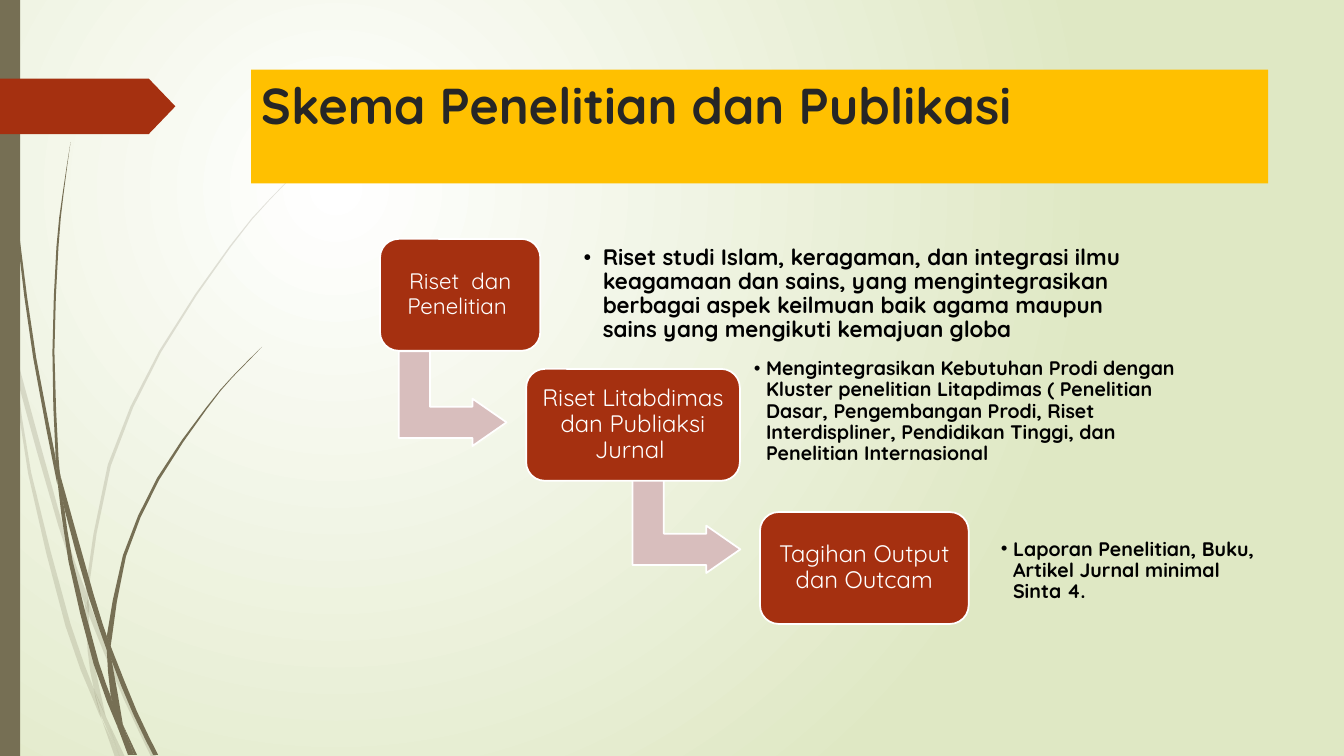
from dataclasses import dataclass
from typing import NamedTuple, Optional

from lxml.etree import SubElement
from pptx import Presentation
from pptx.dml.color import RGBColor
from pptx.enum.shapes import MSO_SHAPE
from pptx.enum.text import MSO_ANCHOR, PP_ALIGN
from pptx.oxml.ns import qn
from pptx.util import Emu, Pt

PX = 9144  # EMU per px, 100 px to the inch


def px(size: float) -> Emu:
    return Emu(round(size * PX))


@dataclass(frozen=True)
class Theme:
    font: str = "Quicksand"
    olive: str = "766F54"
    rust: str = "A53010"
    gold: str = "FFC000"
    rose: str = "D8BEBD"
    white: str = "FFFFFF"
    lime: str = "DFE8C4"
    dark: str = "262626"
    black: str = "000000"
    title: int = 36
    edge: float = 1.25


THEME = Theme()


class Box(NamedTuple):
    x: int
    y: int
    w: int
    h: int


class Note(NamedTuple):
    text: str
    box: Box
    size: int
    pad: int
    hang: int


class Step(NamedTuple):
    text: str
    box: Box
    size: int
    note: Note
    arrow: Optional[Box] = None


class Blade(NamedTuple):
    left: list
    right: list


FAINT = [
    Blade([(0, 282), (0, 299), (11, 350)], [(0, 282), (9, 322), (11, 350)]),
    Blade([(14, 345), (17, 376), (58, 522), (84, 599)], [(14, 345), (62, 520), (85, 586)]),
    Blade([(88, 596), (88, 610), (123, 694), (150, 751)],
          [(88, 596), (92, 607), (127, 692), (155, 751)]),
    Blade([(105, 711), (119, 751)], [(105, 711), (124, 751)]),
    Blade([(11, 350), (28, 470), (65, 621), (92, 693), (101, 714)],
          [(11, 350), (17, 376), (31, 469), (70, 619), (93, 683), (101, 714)]),
    Blade([(84, 599), (87, 646), (93, 683), (105, 711)],
          [(84, 599), (88, 610), (91, 646), (105, 711)]),
    Blade([(312, 153), (268, 197), (228, 244), (158, 348), (107, 461), (85, 584)],
          [(312, 153), (268, 198), (229, 245), (160, 349), (110, 462), (88, 584), (88, 596)]),
    Blade([(101, 714), (114, 751)], [(101, 714), (119, 751)]),
    Blade([(85, 586), (84, 599)], [(85, 586), (88, 596), (88, 610)]),
    Blade([(93, 683), (99, 707), (119, 751)], [(93, 683), (105, 711), (119, 751)]),
]
SOLID = [
    Blade([(3, 0), (4, 48), (7, 110), (17, 233), (33, 355), (57, 481)],
          [(4, 0), (5, 48), (8, 109), (19, 232), (36, 355), (55, 453), (57, 481)]),
    Blade([(60, 472), (64, 505), (88, 592), (106, 645)], [(60, 472), (93, 590), (106, 631)]),
    Blade([(110, 641), (111, 656), (132, 708), (152, 749)],
          [(110, 641), (113, 649), (136, 706), (157, 749)]),
    Blade([(57, 477), (68, 557), (93, 659), (117, 722)],
          [(57, 477), (64, 505), (72, 556), (98, 657), (110, 691), (117, 722)]),
    Blade([(70, 141), (62, 193), (56, 245), (52, 349), (55, 449), (60, 472)],
          [(70, 141), (63, 193), (58, 245), (54, 349), (58, 453), (60, 472)]),
    Blade([(122, 719), (133, 749)], [(122, 719), (136, 749)]),
    Blade([(55, 449), (57, 477), (64, 505)], [(55, 449), (60, 472), (64, 505)]),
    Blade([(260, 344), (231, 373), (204, 405), (156, 474), (122, 551), (106, 631)],
          [(261, 344), (231, 374), (205, 406), (158, 476), (125, 552), (111, 633), (110, 641)]),
    Blade([(117, 722), (127, 749)], [(117, 722), (131, 749)]),
    Blade([(106, 645), (110, 691), (122, 719)], [(106, 645), (111, 656), (122, 719)]),
    Blade([(106, 631), (106, 645)], [(106, 631), (110, 641), (111, 656)]),
    Blade([(110, 691), (117, 722), (130, 749)], [(110, 691), (122, 719), (133, 749)]),
]

STEPS = [
    Step("Riset  dan Penelitian ", Box(377, 237, 159, 111), 16,
         Note("Riset studi Islam, keragaman, dan integrasi ilmu keagamaan dan "
              "sains, yang mengintegrasikan berbagai aspek keilmuan baik agama "
              "maupun sains yang mengikuti kemajuan globa",
              Box(572, 234, 559, 116), 16, 7, 19),
         Box(402, 342, 94, 107)),
    Step("Riset Litabdimas dan Publiaksi Jurnal ", Box(522, 366, 212, 111), 17,
         Note("Mengintegrasikan Kebutuhan Prodi dengan Kluster penelitian "
              "Litapdimas ( Penelitian Dasar, Pengembangan Prodi, Riset "
              "Interdispliner, Pendidikan Tinggi, dan Penelitian Internasional",
              Box(742, 352, 436, 113), 14, 6, 12),
         Box(634, 468, 94, 107)),
    Step("Tagihan Output dan Outcam", Box(754, 508, 207, 111), 17,
         Note("Laporan Penelitian, Buku, Artikel Jurnal minimal Sinta 4.",
              Box(987, 488, 271, 157), 14, 6, 12)),
]


def paint(shape, fill: str, edge: str = "") -> None:
    shape.shadow.inherit = False
    shape.fill.solid()
    shape.fill.fore_color.rgb = RGBColor.from_string(fill)
    if edge:
        shape.line.color.rgb = RGBColor.from_string(edge)
        shape.line.width = Pt(THEME.edge)
    else:
        shape.line.fill.background()


def add_form(slide, kind: MSO_SHAPE, box: Box, fill: str, edge: str = ""):
    shape = slide.shapes.add_shape(kind, *map(px, box))
    paint(shape, fill, edge)
    return shape


def write(shape, text: str, size: int, color: str, pad: int = 0,
          bold: bool = False, align: PP_ALIGN = PP_ALIGN.LEFT):
    frame = shape.text_frame
    frame.word_wrap = True
    frame.vertical_anchor = MSO_ANCHOR.MIDDLE if pad else MSO_ANCHOR.TOP
    para = frame.paragraphs[0]
    if pad:
        frame.margin_left = frame.margin_right = px(pad)
        frame.margin_top = frame.margin_bottom = px(pad)
        para.line_spacing = 0.9
    para.text, para.alignment = text, align
    font = para.font
    font.name, font.size, font.bold = THEME.font, Pt(size), bold
    font.color.rgb = RGBColor.from_string(color)
    return para


def curve(knots: list) -> list:
    """Add a smooth midpoint between each pair of knots."""
    ends = [knots[0], *knots, knots[-1]]
    points = []
    for a, b, c, d in zip(ends, ends[1:], ends[2:], ends[3:]):
        mid = tuple((9 * (q + r) - p - s) / 16 for p, q, r, s in zip(a, b, c, d))
        points += [b, mid]
    return points + [knots[-1]]


def add_blade(slide, blade: Blade, faint: bool) -> None:
    rim = curve(blade.left) + curve(blade.right)[:0:-1]
    start, *rest = [(px(x), px(y)) for x, y in rim]
    pen = slide.shapes.build_freeform(*start)
    pen.add_line_segments(rest, close=True)
    shape = pen.convert_to_shape()
    paint(shape, THEME.olive)
    if faint:
        color = shape.element.spPr.find(qn("a:solidFill"))[0]
        SubElement(color, qn("a:alpha"), val="20000")


def add_note(slide, note: Note) -> None:
    area = slide.shapes.add_textbox(*map(px, note.box))
    para = write(area, note.text, note.size, THEME.black, note.pad, bold=True)
    props = para._p.get_or_add_pPr()
    props.set("marL", str(px(note.hang)))
    props.set("indent", str(-px(note.hang)))
    last = props.find(qn("a:defRPr"))
    last.addprevious(SubElement(props, qn("a:buFont"), typeface=THEME.font))
    last.addprevious(SubElement(props, qn("a:buChar"), char="•"))


def add_step(slide, step: Step) -> None:
    if step.arrow:
        arrow = add_form(slide, MSO_SHAPE.BENT_UP_ARROW, step.arrow, THEME.rose, THEME.white)
        arrow.rotation = 90
        for i, value in enumerate((0.33, 0.25, 0.36)):
            arrow.adjustments[i] = value
    card = add_form(slide, MSO_SHAPE.ROUNDED_RECTANGLE, step.box, THEME.rust, THEME.white)
    write(card, step.text, step.size, THEME.white, 7, align=PP_ALIGN.CENTER)
    add_note(slide, step.note)


def add_glow(slide) -> None:
    fill = slide.background.fill
    fill.gradient()
    for stop, color in zip(fill.gradient_stops, (THEME.white, THEME.lime)):
        stop.color.rgb = RGBColor.from_string(color)
    line = next(slide.element.iter(qn("a:lin")))
    grad = line.getparent()
    grad.remove(line)
    glow = SubElement(grad, qn("a:path"), path="circle")
    SubElement(glow, qn("a:fillToRect"), l="50000", t="50000", r="100000", b="100000")


def main() -> None:
    deck = Presentation()
    deck.slide_width, deck.slide_height = Emu(12192000), px(750)
    slide = deck.slides.add_slide(deck.slide_layouts[6])
    # Backdrop: glow, grass, side bar and flag
    add_glow(slide)
    for blade in FAINT + SOLID:
        add_blade(slide, blade, blade in FAINT)
    add_form(slide, MSO_SHAPE.RECTANGLE, Box(0, 0, 20, 750), THEME.olive)
    flag = add_form(slide, MSO_SHAPE.PENTAGON, Box(0, 78, 174, 55), THEME.rust)
    flag.adjustments[0] = 0.48
    # Title
    band = add_form(slide, MSO_SHAPE.RECTANGLE, Box(249, 69, 1009, 113), THEME.gold)
    write(band, "Skema Penelitian dan Publikasi", THEME.title, THEME.dark, bold=True)
    # Steps with arrows and notes
    for step in STEPS:
        add_step(slide, step)
    deck.save("out.pptx")


if __name__ == "__main__":
    main()
